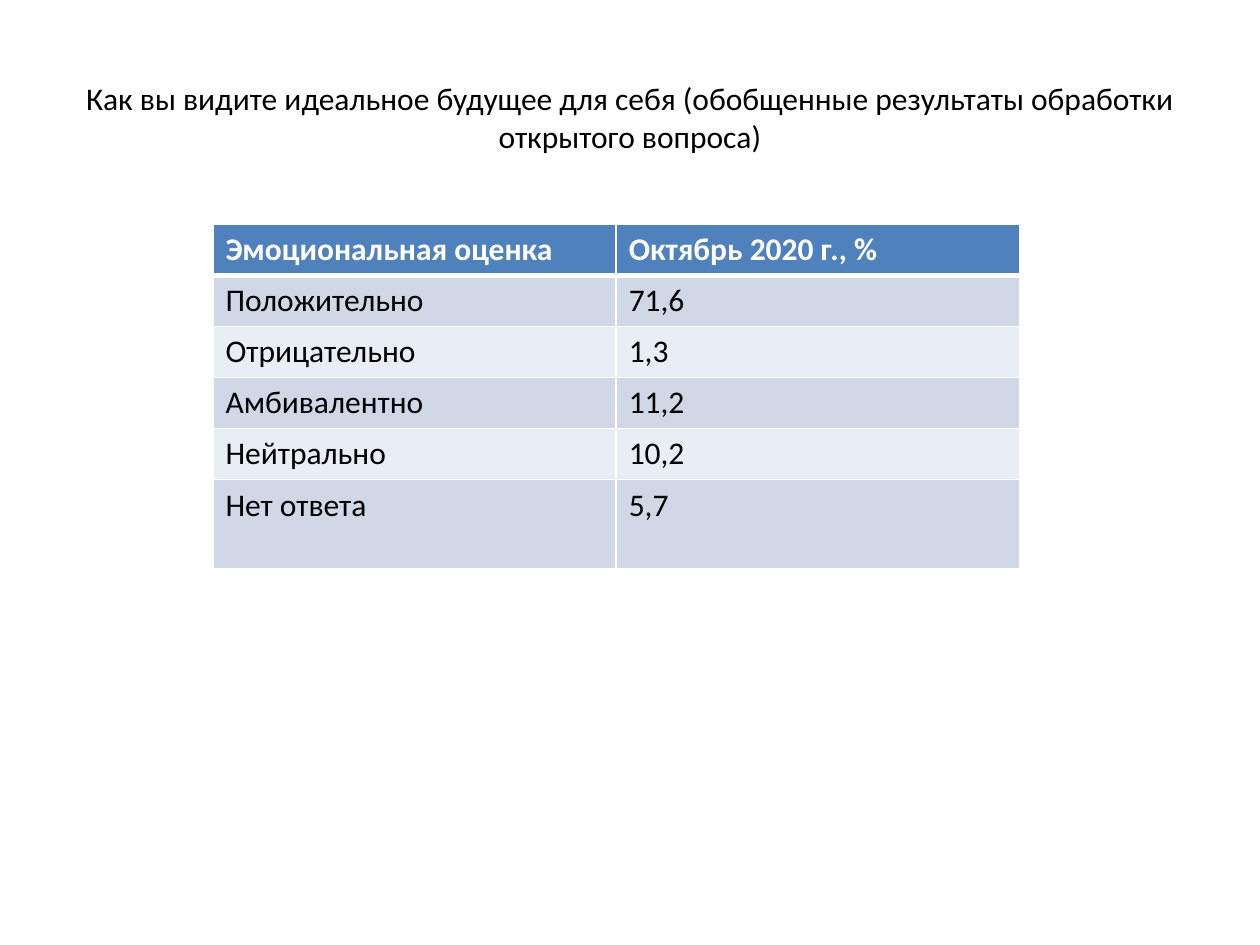
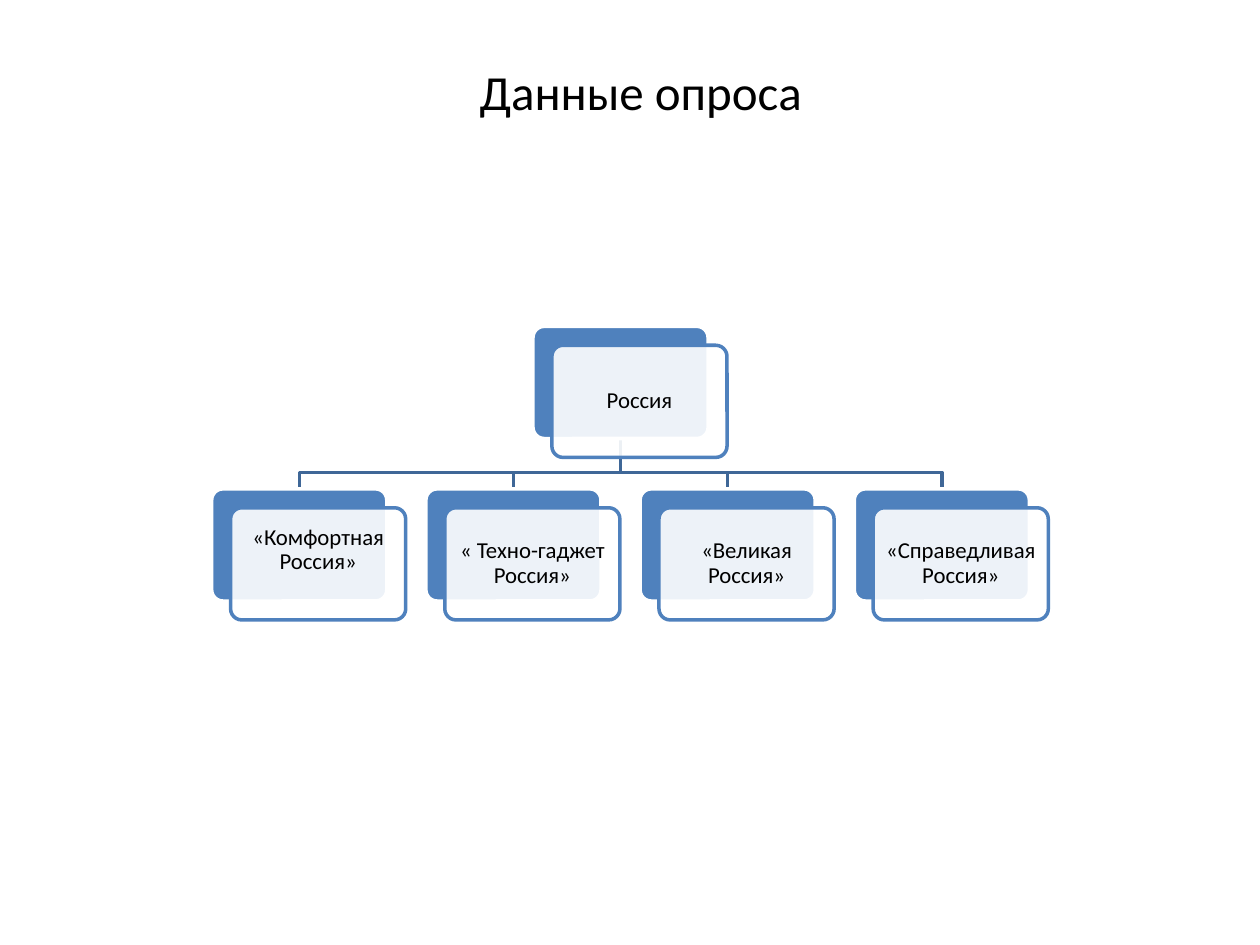
import pptx
import pptx.dml.color
import pptx.enum.shapes
import pptx.enum.text
import pptx.oxml
import pptx.oxml.ns
import pptx.util

Inches = pptx.util.Inches
Pt = pptx.util.Pt

# Content
QUESTION = "Как вы видите идеальное будущее для себя (обобщенные результаты обработки открытого вопроса)"
RATINGS = [
    ("Эмоциональная оценка", "Октябрь 2020 г., %"),
    ("Положительно", "71,6"),
    ("Отрицательно", "1,3"),
    ("Амбивалентно", "11,2"),
    ("Нейтрально", "10,2"),
    ("Нет ответа", "5,7"),
]
SURVEY = "Данные опроса"
ROOT = "Россия"
# Each image of the country, with the free space below its label
BRANCHES = [
    ("«Комфортная Россия»", 0.22),
    ("« Техно-гаджет Россия»", 0),
    ("«Великая Россия»", 0),
    ("«Справедливая Россия»", 0),
]

# Shared style
FONT = "Calibri"
BLACK, WHITE = "000000", "FFFFFF"
BLUE, DARK_BLUE = "4F81BD", "3F6797"
BANDS = ("D0D8E8", "E9EDF4")

# Table measures
TABLE_LEFT, TABLE_TOP, COLUMN_WIDTH = 1.69, 1.78, 3.2
ROW_HEIGHT, LAST_ROW_HEIGHT = 0.4, 0.71

# Tree measures
CARD_WIDTH, CARD_HEIGHT, CARD_OFFSET = 1.39, 0.89, 0.15
ROOT_LEFT, ROOT_TOP = 4.23, 2.59
BRANCH_TOP, BRANCH_PITCH, JUNCTION_Y = 3.88, 1.7, 3.75
CARD_INSET = 0.02


def color(value):
    return pptx.dml.color.RGBColor.from_string(value)


def paint(fill, value):
    fill.solid()
    fill.fore_color.rgb = color(value)


def outline(shape, value):
    shape.line.color.rgb = color(value)
    shape.line.width = Pt(2)
    shape.shadow.inherit = False


def format_text(frame, size, value=BLACK, bold=False):
    for paragraph in frame.paragraphs:
        for run in paragraph.runs:
            run.font.name = FONT
            run.font.size = Pt(size)
            run.font.bold = bold
            run.font.color.rgb = color(value)


def add_titled_slide(deck, text, size, box):
    slide = deck.slides.add_slide(deck.slide_layouts[5])
    title = slide.shapes.title
    title.left, title.top, title.width, title.height = map(Inches, box)
    frame = title.text_frame
    frame.text = text
    frame.word_wrap = True
    frame.auto_size = pptx.enum.text.MSO_AUTO_SIZE.NONE
    frame.vertical_anchor = pptx.enum.text.MSO_ANCHOR.MIDDLE
    frame.paragraphs[0].alignment = pptx.enum.text.PP_ALIGN.CENTER
    format_text(frame, size)
    return slide


def add_borders(cell, top, bottom):
    properties = cell._tc.get_or_add_tcPr()
    for side, width in (("L", 1), ("R", 1), ("T", top), ("B", bottom)):
        properties.append(pptx.oxml.parse_xml(
            f'<a:ln{side} {pptx.oxml.ns.nsdecls("a")} w="{Pt(width)}">'
            f'<a:solidFill><a:srgbClr val="{WHITE}"/></a:solidFill></a:ln{side}>'))


def add_ratings(slide):
    columns = len(RATINGS[0])
    height = ROW_HEIGHT * (len(RATINGS) - 1) + LAST_ROW_HEIGHT
    table = slide.shapes.add_table(
        len(RATINGS), columns, Inches(TABLE_LEFT), Inches(TABLE_TOP),
        Inches(COLUMN_WIDTH * columns), Inches(height)).table
    for column in table.columns:
        column.width = Inches(COLUMN_WIDTH)
    for i, rating in enumerate(RATINGS):
        header = i == 0
        last = i == len(RATINGS) - 1
        table.rows[i].height = Inches(LAST_ROW_HEIGHT if last else ROW_HEIGHT)
        for j, text in enumerate(rating):
            cell = table.cell(i, j)
            cell.text = text
            add_borders(cell, top=3 if i == 1 else 1, bottom=3 if header else 1)
            paint(cell.fill, BLUE if header else BANDS[(i - 1) % 2])
            format_text(cell.text_frame, 18, WHITE if header else BLACK, header)


def add_branch_line(slide, branch_left):
    start_x = Inches(ROOT_LEFT + CARD_WIDTH / 2)
    end_x = Inches(branch_left + CARD_WIDTH / 2)
    junction_y = Inches(JUNCTION_Y)
    builder = slide.shapes.build_freeform(start_x, Inches(ROOT_TOP + CARD_HEIGHT))
    builder.add_line_segments(
        [(start_x, junction_y), (end_x, junction_y), (end_x, Inches(BRANCH_TOP))],
        close=False)
    branch_line = builder.convert_to_shape()
    branch_line.fill.background()
    outline(branch_line, DARK_BLUE)


def add_panel(slide, left, top, fill, line):
    panel = slide.shapes.add_shape(
        pptx.enum.shapes.MSO_SHAPE.ROUNDED_RECTANGLE, Inches(left), Inches(top),
        Inches(CARD_WIDTH), Inches(CARD_HEIGHT))
    panel.adjustments[0] = 0.1
    paint(panel.fill, fill)
    outline(panel, line)
    return panel


def add_card(slide, text, left, top, space_below=0):
    add_panel(slide, left, top, BLUE, WHITE)
    front = add_panel(slide, left + CARD_OFFSET, top + CARD_OFFSET, WHITE, BLUE)
    # Let the back panel show through
    tint = front.fill._xPr.find(".//" + pptx.oxml.ns.qn("a:srgbClr"))
    tint.append(pptx.oxml.parse_xml(
        f'<a:alpha {pptx.oxml.ns.nsdecls("a")} val="90000"/>'))
    frame = front.text_frame
    frame.text = text
    frame.word_wrap = True
    frame.vertical_anchor = pptx.enum.text.MSO_ANCHOR.MIDDLE
    frame.margin_left = frame.margin_right = frame.margin_top = Inches(CARD_INSET)
    frame.margin_bottom = Inches(CARD_INSET + space_below)
    label = frame.paragraphs[0]
    label.alignment = pptx.enum.text.PP_ALIGN.CENTER
    label.line_spacing = 0.9
    format_text(frame, 13)


def add_tree(slide):
    middle = (len(BRANCHES) - 1) / 2
    lefts = [ROOT_LEFT + (i - middle) * BRANCH_PITCH for i in range(len(BRANCHES))]
    for left in lefts:
        add_branch_line(slide, left)
    add_card(slide, ROOT, ROOT_LEFT, ROOT_TOP)
    for left, (text, space_below) in zip(lefts, BRANCHES):
        add_card(slide, text, left, BRANCH_TOP, space_below)


def main():
    deck = pptx.Presentation()
    deck.slide_width, deck.slide_height = Inches(10), Inches(7.5)
    add_ratings(add_titled_slide(deck, QUESTION, 18, (0.5, 0.3, 9, 1.25)))
    add_tree(add_titled_slide(deck, SURVEY, 28, (0.67, 0.3, 8.83, 0.85)))
    deck.save("out.pptx")


if __name__ == "__main__":
    main()
